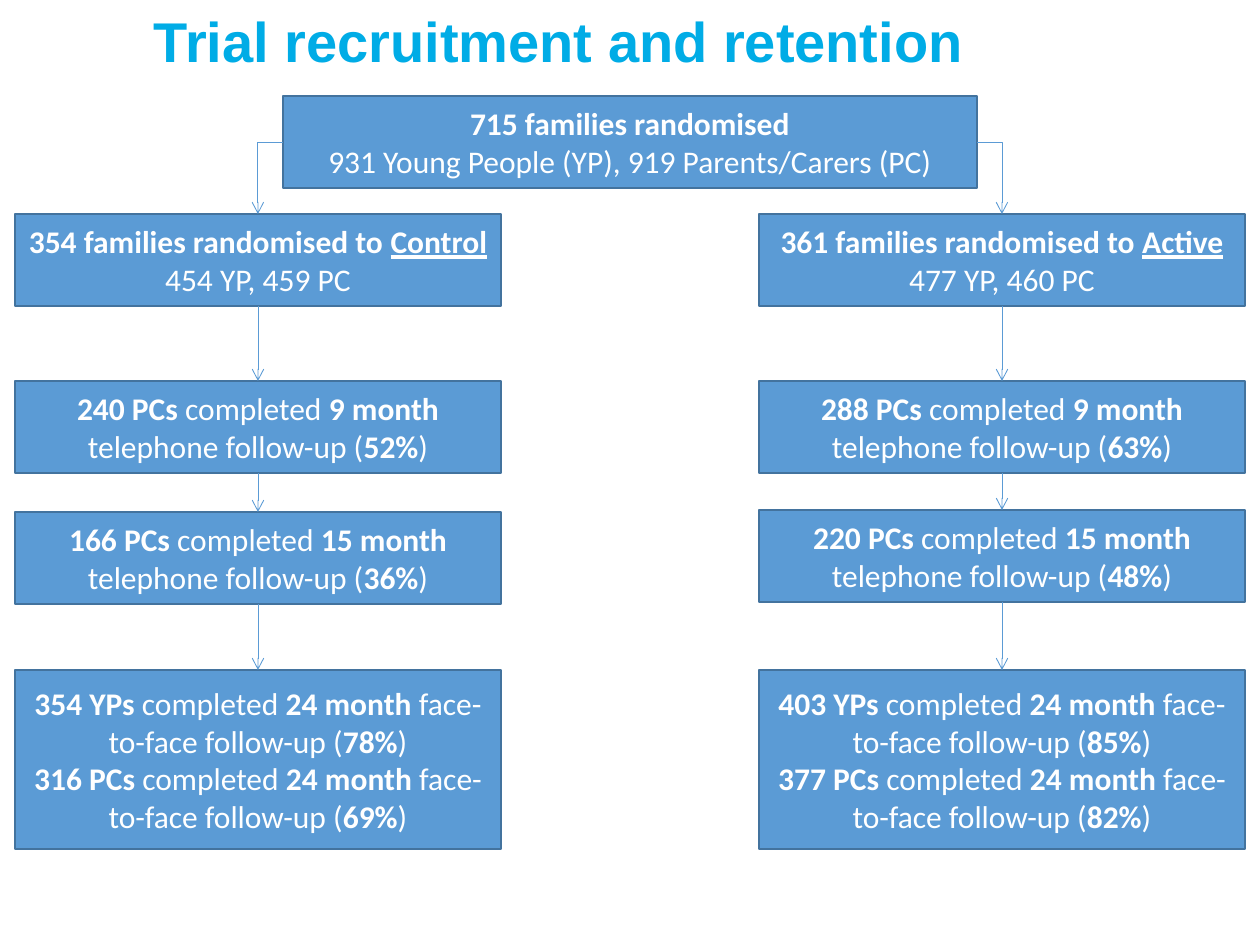
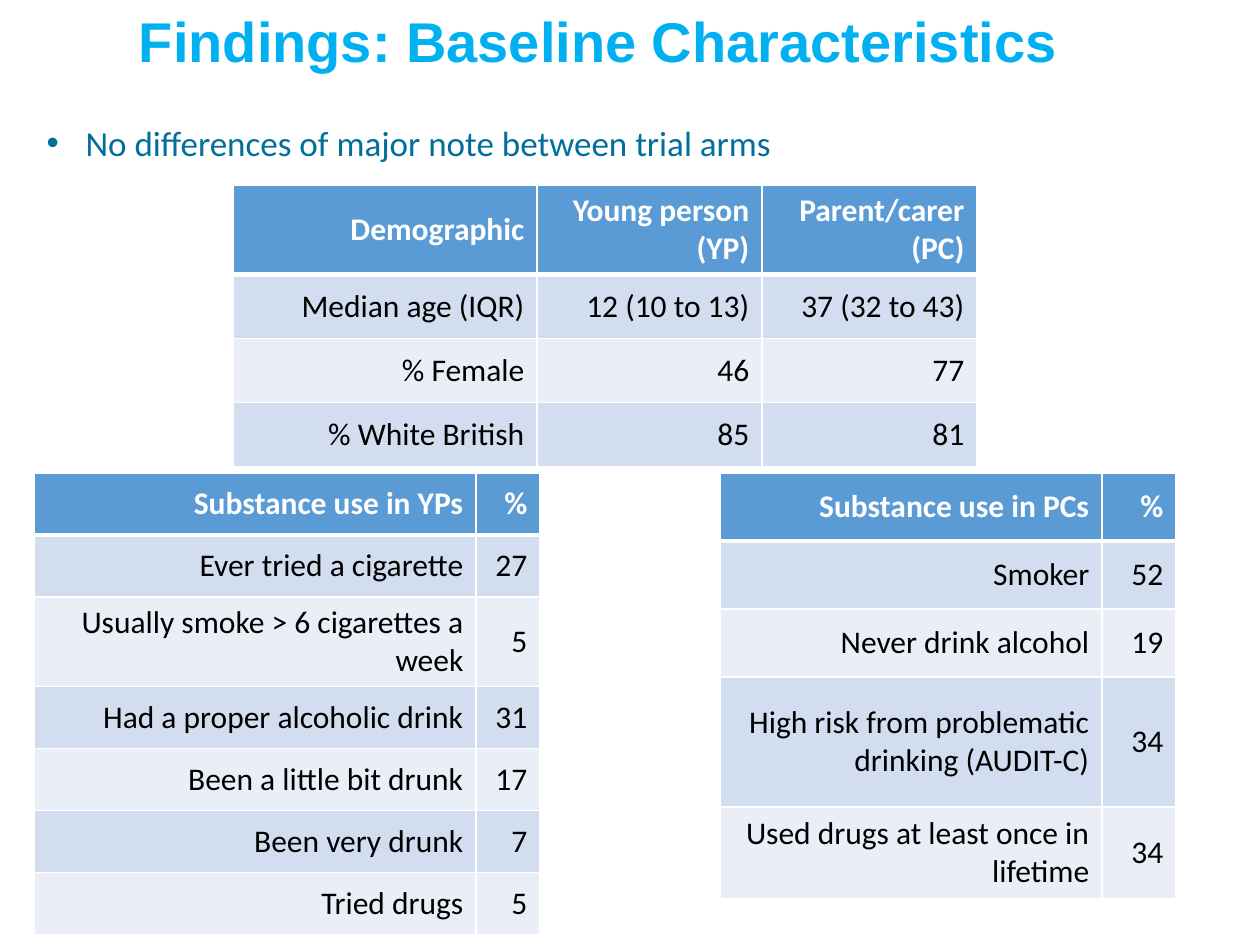
from dataclasses import dataclass
from typing import NamedTuple

from pptx import Presentation
from pptx.dml.color import RGBColor
from pptx.enum.shapes import MSO_CONNECTOR, MSO_SHAPE
from pptx.enum.text import MSO_ANCHOR, MSO_AUTO_SIZE, PP_ALIGN
from pptx.oxml.ns import qn
from pptx.oxml.xmlchemy import OxmlElement
from pptx.shapes.autoshape import Shape
from pptx.slide import Slide
from pptx.table import _Cell
from pptx.util import Emu, Pt

PX_PER_INCH = 126
WHITE, BLACK = "FFFFFF", "000000"
BLUE, BLUE_EDGE = "5B9BD5", "43739E"
BANDS = ("D2DEEF", "EAEFF7")
BULLET_COLOR = "006F9B"
HEADING_FONT, BODY_FONT = "Arial", "Calibri"

# Connection sites of a rectangle
TOP, LEFT, BOTTOM, RIGHT = range(4)


class Run(NamedTuple):
    text: str
    bold: bool = False
    underline: bool = False


Lines = list[list[Run]]


class Box(NamedTuple):
    x: int
    y: int
    w: int
    h: int


class FlowStep(NamedTuple):
    y: int
    h: int
    lines: Lines


@dataclass
class TrialArm:
    x: int
    root_side: int
    steps: list[FlowStep]


@dataclass
class DataTable:
    x: int
    y: int
    col_widths: list[int]
    row_heights: list[int]
    rows: list[tuple[str, ...]]


def px(n: int) -> Emu:
    return Emu(round(n * 914400 / PX_PER_INCH))


def rgb(color: str) -> RGBColor:
    return RGBColor.from_string(color)


def place(sp: Shape, box: Box) -> None:
    sp.left, sp.top, sp.width, sp.height = map(px, box)


def add_run(p, run: Run, color: str, size: int = 18, font: str = BODY_FONT) -> None:
    r = p.add_run()
    r.text = run.text
    r.font.name, r.font.size = font, Pt(size)
    r.font.bold, r.font.underline = run.bold, run.underline
    r.font.color.rgb = rgb(color)


def set_title(s: Slide, text: str, indent: int, color: str) -> None:
    sp = s.shapes.title
    place(sp, Box(0, 0, 1260, 81))
    tf = sp.text_frame
    tf.auto_size = MSO_AUTO_SIZE.NONE
    tf.vertical_anchor = MSO_ANCHOR.TOP
    tf.margin_left = px(indent)
    p = tf.paragraphs[0]
    p.alignment = PP_ALIGN.LEFT
    add_run(p, Run(text, bold=True), color, 32, HEADING_FONT)


def set_bullet(s: Slide, text: str, box: Box) -> None:
    sp = s.placeholders[1]
    place(sp, box)
    tf = sp.text_frame
    tf.auto_size = MSO_AUTO_SIZE.NONE
    p = tf.paragraphs[0]
    p.space_before = Pt(0)
    pPr = p._p.get_or_add_pPr()
    pPr.set("marL", str(px(39)))
    pPr.set("indent", str(-px(39)))
    bullet = OxmlElement("a:buChar")
    bullet.set("char", "•")
    pPr.append(bullet)
    add_run(p, Run(text), BULLET_COLOR, 20)


def add_flow_box(s: Slide, box: Box, lines: Lines) -> Shape:
    sp = s.shapes.add_shape(MSO_SHAPE.FLOWCHART_PROCESS, *map(px, box))
    sp.shadow.inherit = False
    sp.fill.solid()
    sp.fill.fore_color.rgb = rgb(BLUE)
    sp.line.color.rgb = rgb(BLUE_EDGE)
    sp.line.width = Pt(1)
    tf = sp.text_frame
    tf.word_wrap = True
    tf.vertical_anchor = MSO_ANCHOR.MIDDLE
    for i, line in enumerate(lines):
        p = tf.add_paragraph() if i else tf.paragraphs[0]
        p.alignment = PP_ALIGN.CENTER
        for run in line:
            add_run(p, run, WHITE)
    return sp


def add_arrow(s: Slide, start: Shape, side: int, end: Shape) -> None:
    """Lead from one side of start to the top of end, with one bend from a left or right side."""
    straight = side == BOTTOM
    kind = MSO_CONNECTOR.STRAIGHT if straight else MSO_CONNECTOR.ELBOW
    c = s.shapes.add_connector(kind, 0, 0, 0, 0)
    c.begin_connect(start, side)
    c.end_connect(end, TOP)
    c.line.color.rgb = rgb(BLUE)
    c.line.width = Pt(0.5)
    spPr = c._element.spPr
    if not straight:
        spPr.find(qn("a:prstGeom")).set("prst", "bentConnector2")
    head = OxmlElement("a:tailEnd")
    head.set("type", "arrow")
    spPr.find(qn("a:ln")).append(head)
    spPr.append(OxmlElement("a:effectLst"))


def set_borders(cell: _Cell, top: int, bottom: int) -> None:
    tcPr = cell._tc.get_or_add_tcPr()
    for tag, width in (("lnL", 1), ("lnR", 1), ("lnT", top), ("lnB", bottom)):
        ln = OxmlElement(f"a:{tag}")
        ln.set("w", str(Pt(width)))
        fill = OxmlElement("a:solidFill")
        color = OxmlElement("a:srgbClr")
        color.set("val", WHITE)
        fill.append(color)
        ln.append(fill)
        tcPr.append(ln)


def add_data_table(s: Slide, data: DataTable) -> None:
    frame = s.shapes.add_table(
        len(data.rows), len(data.col_widths), px(data.x), px(data.y),
        px(sum(data.col_widths)), px(sum(data.row_heights)))
    table = frame.table
    for column, width in zip(table.columns, data.col_widths):
        column.width = px(width)
    for i, (height, texts) in enumerate(zip(data.row_heights, data.rows)):
        table.rows[i].height = px(height)
        header = i == 0
        for j, text in enumerate(texts):
            cell = table.cell(i, j)
            set_borders(cell, top=3 if i == 1 else 1, bottom=3 if header else 1)
            cell.fill.solid()
            cell.fill.fore_color.rgb = rgb(BLUE if header else BANDS[(i - 1) % 2])
            cell.vertical_anchor = MSO_ANCHOR.MIDDLE
            p = cell.text_frame.paragraphs[0]
            p.alignment = PP_ALIGN.RIGHT
            add_run(p, Run(text, bold=header), WHITE if header else BLACK)


def randomised(families: int, arm: str, members: str) -> Lines:
    return [[Run(f"{families} families randomised to ", True), Run(arm, True, True)],
            [Run(members)]]


def follow_up(who: str, months: int, mode: str, rate: int) -> list[Run]:
    return [Run(who, True), Run(" completed "), Run(f"{months} month ", True),
            Run(f"{mode} follow-up ("), Run(f"{rate}%", True), Run(")")]


def phone(y: int, who: str, months: int, rate: int) -> FlowStep:
    return FlowStep(y, 92, [follow_up(who, months, "telephone", rate)])


def visit(yps: int, yp_rate: int, pcs: int, pc_rate: int) -> FlowStep:
    return FlowStep(670, 179, [follow_up(f"{yps} YPs", 24, "face-to-face", yp_rate),
                               follow_up(f"{pcs} PCs", 24, "face-to-face", pc_rate)])


ARM_WIDTH = 486
ARMS = [
    TrialArm(15, LEFT, [
        FlowStep(214, 92, randomised(354, "Control", "454 YP, 459 PC")),
        phone(381, "240 PCs", 9, 52),
        phone(512, "166 PCs", 15, 36),
        visit(354, 78, 316, 69),
    ]),
    TrialArm(759, RIGHT, [
        FlowStep(214, 92, randomised(361, "Active", "477 YP, 460 PC")),
        phone(381, "288 PCs", 9, 63),
        phone(510, "220 PCs", 15, 48),
        visit(403, 85, 377, 82),
    ]),
]

TABLES = [
    DataTable(233, 185, [304, 225, 215], [64] * 4, [
        ("Demographic", "Young person (YP)", "Parent/carer (PC)"),
        ("Median age (IQR)", "12 (10 to 13)", "37 (32 to 43)"),
        ("% Female", "46", "77"),
        ("% White British", "85", "81"),
    ]),
    DataTable(720, 473, [382, 74], [68, 68, 68, 130, 92], [
        ("Substance use in PCs", "%"),
        ("Smoker", "52"),
        ("Never drink alcohol", "19"),
        ("High risk from problematic drinking (AUDIT-C)", "34"),
        ("Used drugs at least once in lifetime", "34"),
    ]),
    DataTable(34, 473, [442, 64], [62] * 7, [
        ("Substance use in YPs", "%"),
        ("Ever tried a cigarette", "27"),
        ("Usually smoke > 6 cigarettes a week", "5"),
        ("Had a proper alcoholic drink", "31"),
        ("Been a little bit drunk", "17"),
        ("Been very drunk", "7"),
        ("Tried drugs", "5"),
    ]),
]


def build_recruitment(prs) -> None:
    s = prs.slides.add_slide(prs.slide_layouts[5])
    set_title(s, "Trial recruitment and retention", 154, "00ACE6")
    root = add_flow_box(s, Box(283, 96, 694, 92), [
        [Run("715 families randomised", True)],
        [Run("931 Young People (YP), 919 Parents/Carers (PC)")],
    ])
    for arm in ARMS:
        previous, side = root, arm.root_side
        for step in arm.steps:
            sp = add_flow_box(s, Box(arm.x, step.y, ARM_WIDTH, step.h), step.lines)
            add_arrow(s, previous, side, sp)
            previous, side = sp, BOTTOM


def build_baseline(prs) -> None:
    s = prs.slides.add_slide(prs.slide_layouts[1])
    set_title(s, "Findings: Baseline Characteristics", 139, "00B0F0")
    set_bullet(s, "No differences of major note between trial arms", Box(34, 115, 759, 55))
    for data in TABLES:
        add_data_table(s, data)


def main() -> None:
    prs = Presentation()
    prs.slide_width, prs.slide_height = px(1260), px(945)
    build_recruitment(prs)
    build_baseline(prs)
    prs.save("out.pptx")


if __name__ == "__main__":
    main()
